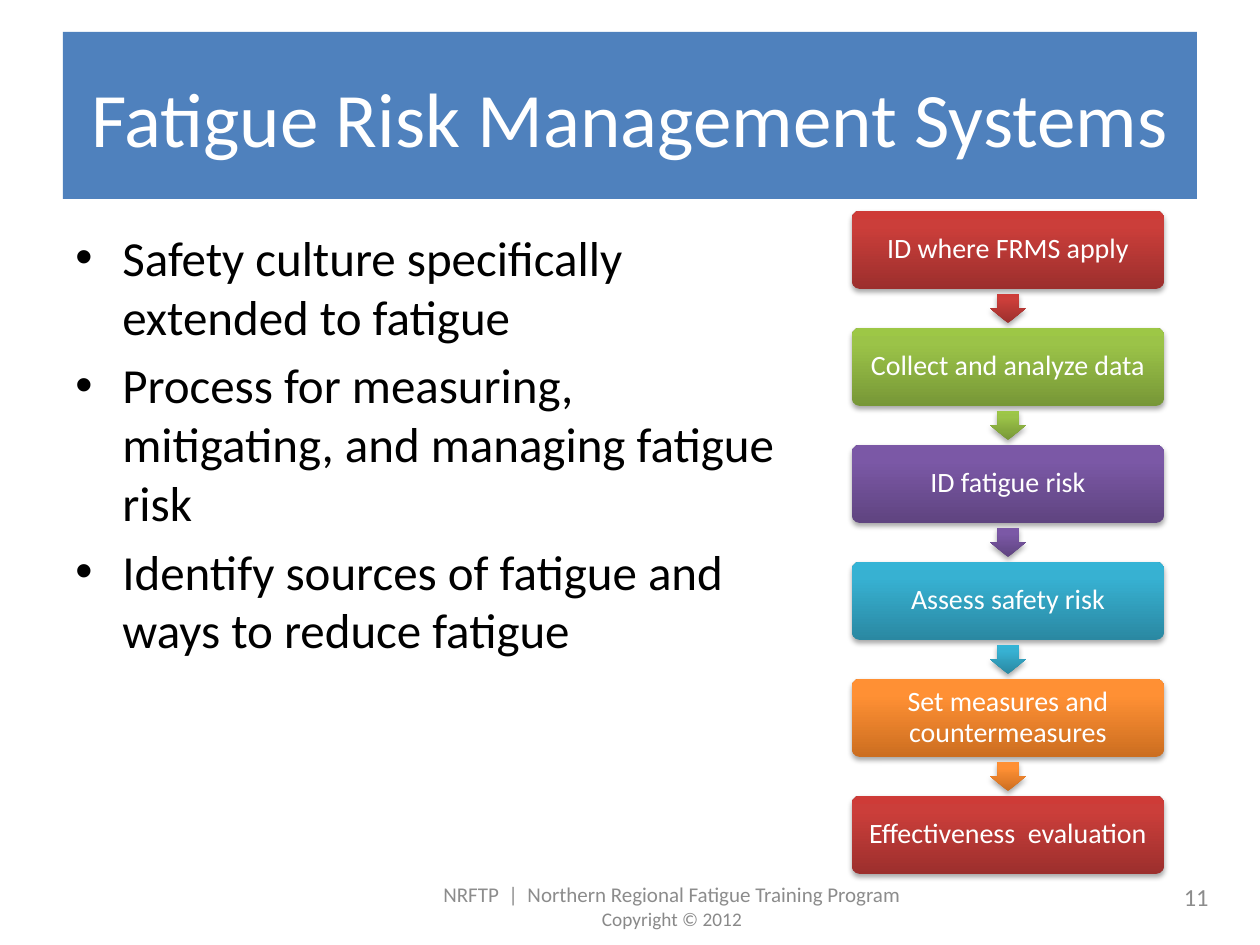
from lxml.etree import SubElement
from pptx import Presentation
from pptx.dml.color import RGBColor
from pptx.enum.shapes import MSO_SHAPE
from pptx.enum.text import MSO_ANCHOR, PP_ALIGN
from pptx.oxml import parse_xml
from pptx.oxml.ns import nsdecls, qn
from pptx.util import Emu, Pt

PIXELS_PER_INCH = 126
FONT = "Calibri"
RED = ("9C2F2D", "CB3E3A", "CE3B37")
GREEN = ("779737", "9BC348", "9DC746")
PURPLE = ("5F4480", "7B58A6", "7C57A8")
TEAL = ("2A88A2", "37B1D2", "34B4D6")
ORANGE = ("CC6E20", "FF9034", "FF9136")
STEPS = [
    ("ID where FRMS apply", RED),
    ("Collect and analyze data", GREEN),
    ("ID fatigue risk", PURPLE),
    ("Assess safety risk", TEAL),
    ("Set measures and countermeasures", ORANGE),
    ("Effectiveness  evaluation", RED),
]
BULLETS = [
    "Safety culture specifically extended to fatigue",
    "Process for measuring, mitigating, and managing fatigue risk",
    "Identify sources of fatigue and ways to reduce fatigue",
]


def px(length):
    return Emu(round(length * 914400 / PIXELS_PER_INCH))


def color(hex_string):
    return RGBColor.from_string(hex_string)


def add_box(shapes, kind, box):
    shape = shapes.add_shape(kind, *map(px, box))
    shape.shadow.inherit = False
    shape.line.fill.background()
    return shape


def add_text_box(slide, box, anchor):
    frame = slide.shapes.add_textbox(*map(px, box)).text_frame
    frame.word_wrap = True
    frame.vertical_anchor = anchor
    return frame


def write(frame, lines, alignment):
    for index, (text, size, hex_string) in enumerate(lines):
        paragraph = frame.paragraphs[0] if index == 0 else frame.add_paragraph()
        paragraph.alignment = alignment
        run = paragraph.add_run()
        run.text = text
        run.font.name = FONT
        run.font.size = Pt(size)
        run.font.color.rgb = color(hex_string)


def style_glossy(shape, gradient):
    shape.fill.gradient()
    properties = shape._element.spPr
    stops = "".join(
        f'<a:gs pos="{position}"><a:srgbClr val="{hex_string}"/></a:gs>'
        for position, hex_string in zip((0, 80000, 100000), gradient)
    )
    properties.replace(properties.find(qn("a:gradFill")), parse_xml(
        f'<a:gradFill {nsdecls("a")} rotWithShape="0"><a:gsLst>{stops}</a:gsLst>'
        '<a:lin ang="16200000" scaled="0"/></a:gradFill>'))
    properties.find(qn("a:effectLst")).append(parse_xml(
        f'<a:outerShdw {nsdecls("a")} blurRad="40000" dist="23000" dir="5400000" '
        'rotWithShape="0"><a:srgbClr val="000000"><a:alpha val="35000"/></a:srgbClr>'
        '</a:outerShdw>'))


def add_banner(slide, box):
    banner = add_box(slide.shapes, MSO_SHAPE.RECTANGLE, box)
    banner.fill.solid()
    banner.fill.fore_color.rgb = color("4F81BD")
    frame = banner.text_frame
    frame.word_wrap = True
    frame.vertical_anchor = MSO_ANCHOR.MIDDLE
    frame.margin_top = px(8)
    write(frame, [("Fatigue Risk Management Systems", 44, "FFFFFF")], PP_ALIGN.CENTER)


def add_bullets(slide, box):
    frame = add_text_box(slide, box, MSO_ANCHOR.TOP)
    write(frame, [(text, 28, "000000") for text in BULLETS], PP_ALIGN.LEFT)
    for paragraph in frame.paragraphs:
        paragraph.space_before = Pt(5.6)
        properties = paragraph._p.get_or_add_pPr()
        properties.set("marL", str(px(47)))
        properties.set("indent", str(px(-47)))
        SubElement(properties, qn("a:buFont"), typeface="Arial")
        SubElement(properties, qn("a:buChar"), char="•")


def add_step(shapes, box, text, gradient):
    step = add_box(shapes, MSO_SHAPE.ROUNDED_RECTANGLE, box)
    step.adjustments[0] = 0.1
    style_glossy(step, gradient)
    frame = step.text_frame
    frame.word_wrap = True
    frame.vertical_anchor = MSO_ANCHOR.MIDDLE
    frame.margin_left = frame.margin_right = px(9)
    frame.margin_top = frame.margin_bottom = px(9)
    write(frame, [(text, 16, "FFFFFF")], PP_ALIGN.CENTER)
    frame.paragraphs[0].line_spacing = 0.9


def add_arrow(shapes, center_x, center_y, gradient):
    length, breadth = 29, 35
    box = (center_x - length / 2, center_y - breadth / 2, length, breadth)
    arrow = add_box(shapes, MSO_SHAPE.RIGHT_ARROW, box)
    arrow.adjustments[0] = 0.6
    arrow.adjustments[1] = 0.5
    arrow.rotation = 90
    style_glossy(arrow, gradient)


def add_process(slide, box):
    left, top, width, height = box
    step_height = 78
    pitch = (height - step_height) / (len(STEPS) - 1)
    shapes = slide.shapes.add_group_shape().shapes
    for index, (text, gradient) in enumerate(STEPS):
        step_top = top + index * pitch
        add_step(shapes, (left, step_top, width, step_height), text, gradient)
        if index < len(STEPS) - 1:
            middle_of_gap = step_top + (step_height + pitch) / 2
            add_arrow(shapes, left + width / 2, middle_of_gap, gradient)


def add_footer(slide, box):
    left, top, width, height = box
    credit = add_text_box(slide, (left, top + 10, 588, height - 2), MSO_ANCHOR.MIDDLE)
    write(credit, [
        ("NRFTP  |  Northern Regional Fatigue Training Program", 12, "8C8C8C"),
        ("Copyright © 2012", 11, "898989"),
    ], PP_ALIGN.CENTER)
    number = add_text_box(slide, (left + width - 294, top, 294, height), MSO_ANCHOR.MIDDLE)
    write(number, [("11", 14, "8C8C8C")], PP_ALIGN.RIGHT)


def main():
    presentation = Presentation()
    presentation.slide_width = px(1260)
    presentation.slide_height = px(945)
    slide = presentation.slides.add_slide(presentation.slide_layouts[6])
    add_footer(slide, (378, 872, 843, 50))
    add_banner(slide, (63, 32, 1134, 167))
    add_bullets(slide, (63, 221, 725, 624))
    add_process(slide, (852, 211, 312, 663))
    presentation.save("out.pptx")


if __name__ == "__main__":
    main()
